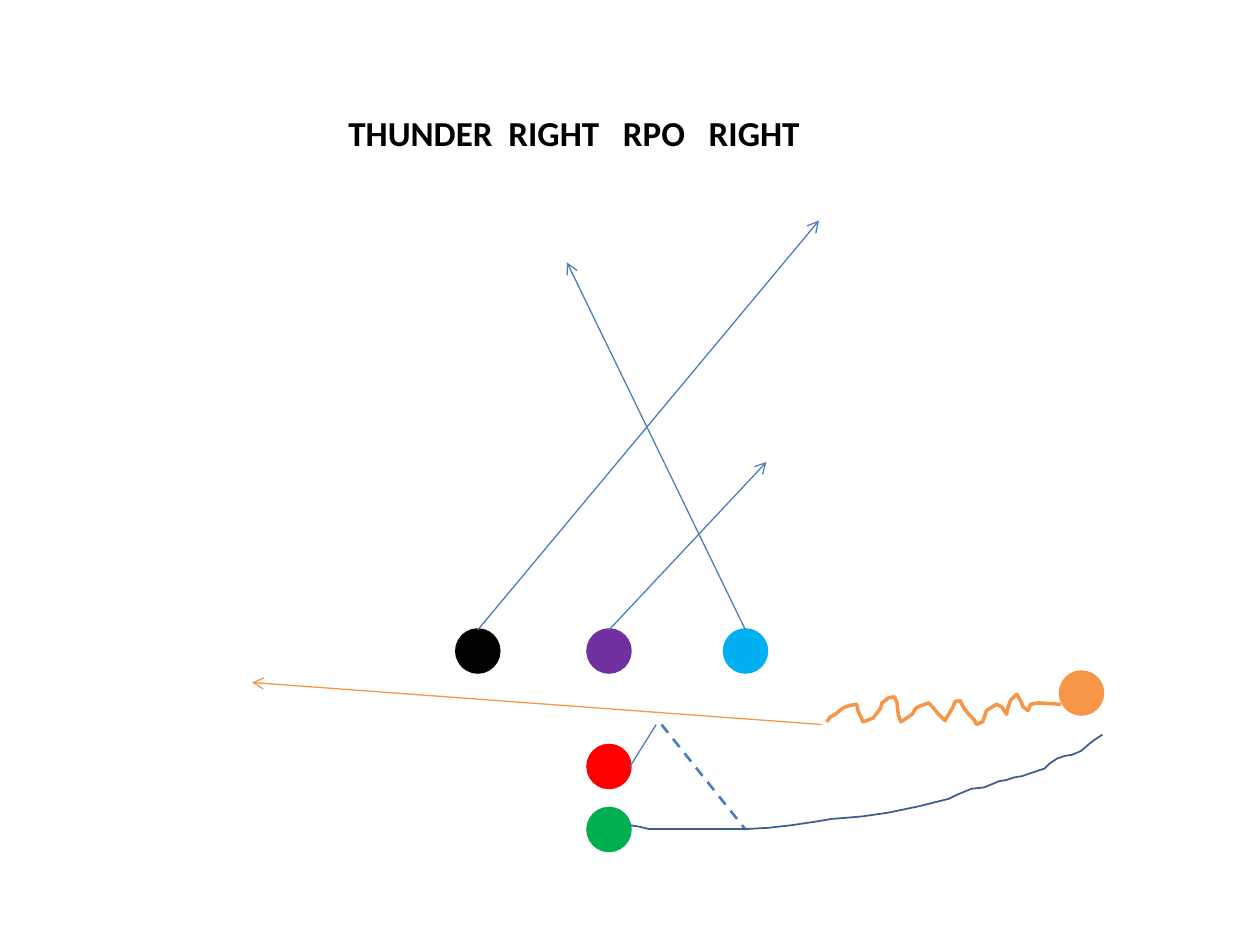
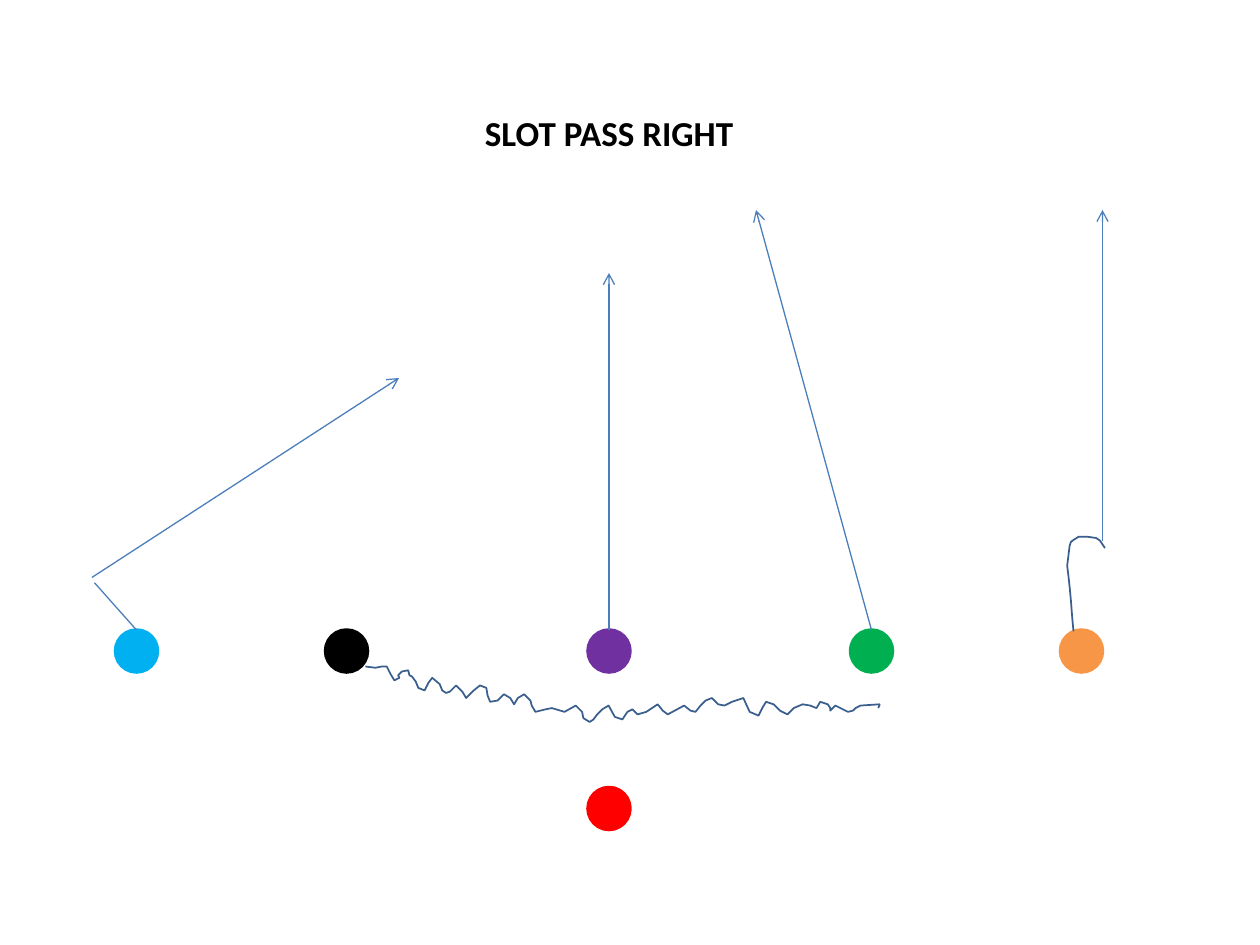
from lxml.etree import SubElement
from pptx import Presentation
from pptx.dml.color import RGBColor
from pptx.enum.dml import MSO_LINE
from pptx.enum.shapes import MSO_CONNECTOR, MSO_SHAPE
from pptx.enum.text import MSO_AUTO_SIZE
from pptx.oxml.ns import qn
from pptx.util import Inches, Pt

BLACK = RGBColor(0x00, 0x00, 0x00)
PURPLE = RGBColor(0x70, 0x30, 0xA0)
GREEN = RGBColor(0x00, 0xB0, 0x50)
ORANGE = RGBColor(0xF7, 0x96, 0x46)
SKY = RGBColor(0x00, 0xB0, 0xF0)
RED = RGBColor(0xFF, 0x00, 0x00)
ROUTE_BLUE = RGBColor(0x4B, 0x7E, 0xBC)
RUN_BLUE = RGBColor(0x3A, 0x5F, 0x8C)

COLUMNS = 120
PLAYER_SIZE = 4
SCRIMMAGE = 60
CENTER = 56
TITLE_ROW, TITLE_HEIGHT = 10, 5.25

deck = Presentation()
deck.slide_width = Inches(10)
deck.slide_height = Inches(7.5)
CELL = deck.slide_width / COLUMNS
CURVE_SCALE = deck.slide_width / 1000


def grid(*lengths):
    return [round(length * CELL) for length in lengths]


sweep = [
    (500, 655), (507, 656), (515, 657.5), (522, 658), (545, 658.3), (570, 658.5),
    (592, 658.3), (610, 657), (628, 655), (648, 652), (660, 650), (684, 648),
    (705, 645), (729, 640), (753, 634), (759, 631), (771, 626), (781, 625),
    (793, 620), (799, 619), (805, 617), (811, 616), (823, 612), (829, 610),
    (833, 606), (839, 602), (845, 600), (851, 599), (858, 596), (865, 590),
    (869, 587), (875, 583),
]
motion = [
    (842, 559), (824, 558), (818, 559), (816, 564), (812, 561), (810, 556),
    (807, 551), (802, 556), (800, 562), (799, 567), (795, 561), (791, 559),
    (783, 564), (780, 573), (775, 575), (773, 571), (769, 567), (765, 562),
    (762, 556), (758, 557), (756, 562), (750, 572), (745, 567), (741, 562),
    (737, 558), (731, 560), (727, 562), (724, 567), (715, 573), (713, 567),
    (712, 558), (710, 553), (705, 554), (700, 558), (699, 562), (693, 570),
    (685, 573), (681, 564), (680, 559), (674, 560), (669, 562), (663, 567),
    (659, 569), (656, 573),
]
hook = [
    (852, 501), (851, 490), (850, 477), (849, 466), (847.5, 457), (847, 449),
    (847.5, 441), (849, 433), (850, 430), (853, 428), (856, 426), (863, 426),
    (870, 427), (873, 429), (877, 435),
]
slot_motion = [
    (290, 529), (298, 529.5), (303, 529), (307, 529), (310, 535), (313, 540),
    (317, 538), (316, 536), (319, 533), (324, 532), (325, 536), (327, 537),
    (330, 541), (332, 546), (337, 548), (340, 542), (343, 538), (349, 543),
    (351, 548), (354, 550), (357, 549), (362, 544), (367, 549), (370, 554),
    (376, 548), (381, 544), (386, 546), (387, 552), (389, 557), (395, 556),
    (400, 551), (405, 554), (408, 559), (411, 554), (416, 551), (421, 556),
    (422, 560), (425, 565), (433, 563), (438, 562), (448, 565), (457, 560),
    (462, 565), (463, 570), (468, 573), (471, 571), (474, 567), (478, 563),
    (483, 560), (488, 569), (494, 571), (498, 565), (502, 563), (506, 567),
    (513, 565), (522, 559), (526, 564), (530, 567), (543, 560), (548, 564),
    (552, 565), (556, 560), (560, 556), (565, 554), (570, 559), (575, 560),
    (581, 557), (590, 554), (595, 565), (602, 568), (605, 562), (608, 557),
    (614, 559), (619, 564), (625, 567), (630, 562), (637, 559), (643, 560),
    (648, 562), (651, 557), (657, 559), (659, 562), (659, 564), (663, 560),
    (673, 565), (677, 564), (679, 562), (683, 560), (698, 559), (698, 560),
    (697, 562),
]

plays = [
    dict(
        title="THUNDER  RIGHT   RPO   RIGHT", left=32, width=49, wrap=True,
        players=[
            (PURPLE, CENTER, SCRIMMAGE), (GREEN, CENTER, 77), (ORANGE, 101, 64),
            (BLACK, 43.5, SCRIMMAGE), (SKY, 69, SCRIMMAGE), (RED, CENTER, 71),
        ],
        routes=[
            (71, 60, 54, 25, ROUTE_BLUE, "arrow"),
            (60, 73, 62.5, 69, ROUTE_BLUE, "plain"),
            (58, 60, 73, 44, ROUTE_BLUE, "arrow"),
            (45.5, 60, 78, 21, ROUTE_BLUE, "arrow"),
            (78.25, 69, 24, 65, ORANGE, "arrow"),
            (63, 69, 71, 79, ROUTE_BLUE, "dash"),
        ],
        curves=[(sweep, RUN_BLUE, 1), (motion, ORANGE, 2)],
    ),
    dict(
        title="SLOT PASS RIGHT", left=45, width=26.25, wrap=False,
        players=[
            (PURPLE, CENTER, SCRIMMAGE), (GREEN, 81, SCRIMMAGE),
            (ORANGE, 101, SCRIMMAGE), (BLACK, 31, SCRIMMAGE),
            (SKY, 11, SCRIMMAGE), (RED, CENTER, 75),
        ],
        routes=[
            (58, 44, 58, 26, ROUTE_BLUE, "arrow"),
            (8.75, 55, 38, 36, ROUTE_BLUE, "arrow"),
            (83, 60, 72, 20, ROUTE_BLUE, "arrow"),
            (105, 51.5, 105, 20, ROUTE_BLUE, "arrow"),
            (58, 60, 58, 43, ROUTE_BLUE, "plain"),
            (13, 60, 9, 55.5, ROUTE_BLUE, "plain"),
        ],
        curves=[(hook, RUN_BLUE, 1), (slot_motion, RUN_BLUE, 1)],
    ),
]

for play in plays:
    page = deck.slides.add_slide(deck.slide_layouts[6])

    for color, column, row in play["players"]:
        player = page.shapes.add_shape(
            MSO_SHAPE.OVAL, *grid(column, row, PLAYER_SIZE, PLAYER_SIZE))
        player.shadow.inherit = False
        player.fill.solid()
        player.fill.fore_color.rgb = color
        player.line.color.rgb = color
        player.line.width = Pt(2)

    box = page.shapes.add_textbox(
        *grid(play["left"], TITLE_ROW, play["width"], TITLE_HEIGHT))
    box.text_frame.word_wrap = play["wrap"]
    box.text_frame.auto_size = MSO_AUTO_SIZE.SHAPE_TO_FIT_TEXT
    span = box.text_frame.paragraphs[0].add_run()
    span.text = play["title"]
    span.font.name = "Calibri"
    span.font.size = Pt(20)
    span.font.bold = True
    span.font.color.rgb = BLACK

    for *ends, color, style in play["routes"]:
        route = page.shapes.add_connector(MSO_CONNECTOR.STRAIGHT, *grid(*ends))
        route.line.color.rgb = color
        route.line.width = Pt(1.5 if style == "dash" else 0.75)
        properties = route.element.spPr
        if style == "dash":
            route.line.dash_style = MSO_LINE.DASH
        if style == "arrow":
            SubElement(properties.find(qn("a:ln")), qn("a:tailEnd"), type="arrow")
        SubElement(properties, qn("a:effectLst"))

    for points, color, weight in play["curves"]:
        builder = page.shapes.build_freeform(*points[0], scale=CURVE_SCALE)
        builder.add_line_segments(points[1:], close=False)
        curve = builder.convert_to_shape()
        curve.shadow.inherit = False
        curve.fill.background()
        curve.line.color.rgb = color
        curve.line.width = Pt(weight)

deck.save("out.pptx")
